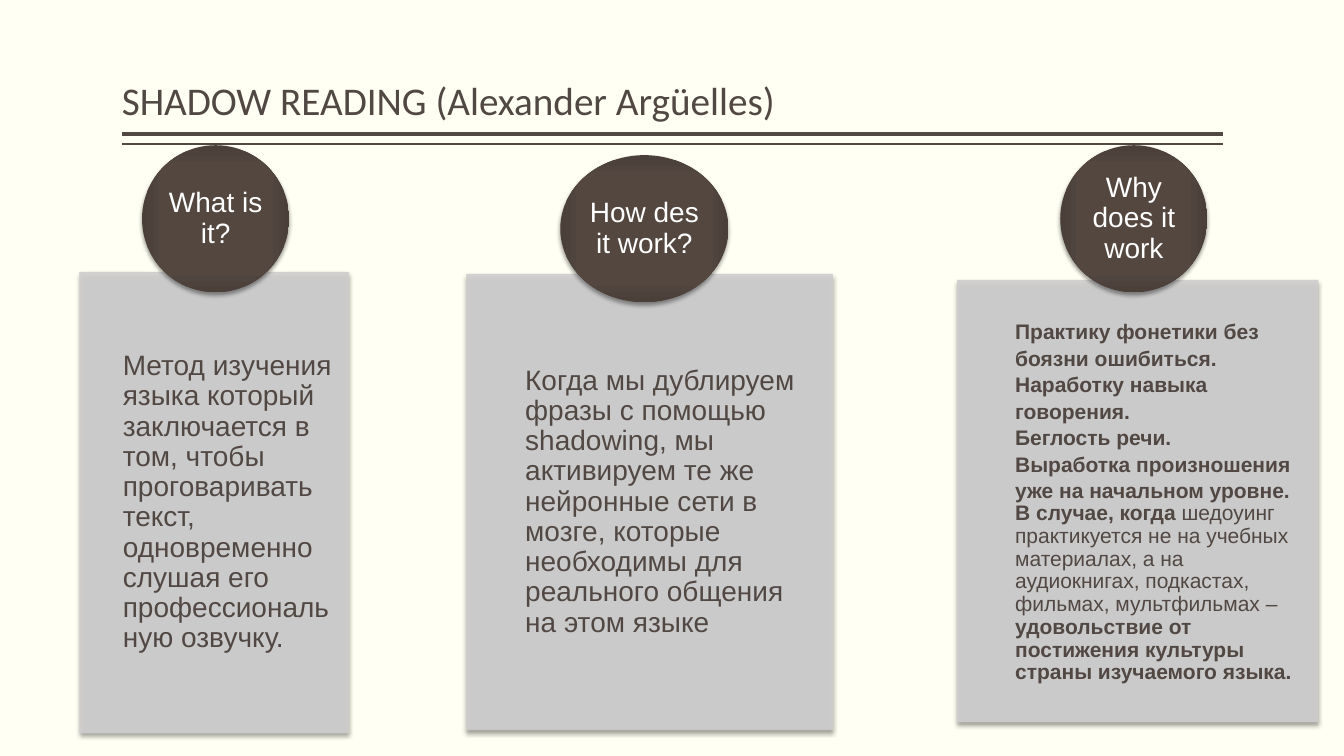
from dataclasses import dataclass

from lxml import etree
from pptx import Presentation
from pptx.dml.color import RGBColor
from pptx.enum.shapes import MSO_CONNECTOR, MSO_SHAPE
from pptx.enum.text import MSO_ANCHOR, MSO_AUTO_SIZE, PP_ALIGN
from pptx.oxml import parse_xml
from pptx.oxml.ns import nsdecls, qn
from pptx.util import Cm, Pt


@dataclass(frozen=True)
class Theme:
    paper: str = "FFFFF3"
    ink: str = "514843"
    card: str = "D0CFCF"
    white: str = "FFFFFF"
    disc: tuple = ((0, "544740"), (71, "534740"), (100, "4A3F39"))
    heading_font: str = "Calibri"
    body_font: str = "Arial"
    heading: int = 28
    body: int = 20
    small: int = 15


THEME = Theme()


def fill_text(box, paras, size, color, font, align, anchor, insets):
    """Each paragraph is (line spacing, [(text, bold), ...])."""
    frame = box.text_frame
    frame.word_wrap = True
    frame.auto_size = MSO_AUTO_SIZE.NONE
    frame.vertical_anchor = anchor
    (frame.margin_left, frame.margin_top,
     frame.margin_right, frame.margin_bottom) = [Cm(inset) for inset in insets]
    for index, (spacing, spans) in enumerate(paras):
        para = frame.add_paragraph() if index else frame.paragraphs[0]
        para.alignment = align
        para.line_spacing = spacing
        para.space_before = para.space_after = Pt(0)
        for text, bold in spans:
            span = para.add_run()
            span.text = text
            span.font.name = font
            span.font.size = Pt(size)
            span.font.bold = bold
            span.font.color.rgb = RGBColor.from_string(color)


def add_shadow(shape):
    shape.shadow.inherit = False
    effects = shape._element.spPr.find(qn("a:effectLst"))
    effects.append(parse_xml(
        f'<a:outerShdw {nsdecls("a")} blurRad="{Pt(3.1)}" dist="{Pt(2)}" '
        'dir="5400000" rotWithShape="0"><a:srgbClr val="000000">'
        '<a:alpha val="38000"/></a:srgbClr></a:outerShdw>'))


# Slide
deck = Presentation()
deck.slide_width, deck.slide_height = Cm(33.87), Cm(19.05)
page = deck.slides.add_slide(deck.slide_layouts[5])
page.background.fill.solid()
page.background.fill.fore_color.rgb = RGBColor.from_string(THEME.paper)

# Title
title = page.shapes.title
title.left, title.top, title.width, title.height = Cm(3.07), Cm(0.2), Cm(27.74), Cm(3.05)
fill_text(title, [(0.9, [("SHADOW READING (Alexander Argüelles)", False)])],
          THEME.heading, THEME.ink, THEME.heading_font, PP_ALIGN.LEFT,
          MSO_ANCHOR.BOTTOM, (0, 0.13, 0, 0.13))

# Double rule under the title
for y, weight in ((3.38, 3), (3.63, 1)):
    rule = page.shapes.add_connector(MSO_CONNECTOR.STRAIGHT, Cm(30.81), Cm(y), Cm(3.07), Cm(y))
    rule.line.color.rgb = RGBColor.from_string(THEME.ink)
    rule.line.width = Pt(weight)
    etree.SubElement(rule._element.spPr, qn("a:effectLst"))

# Columns: question, disc box, card box, text size, padding, paragraphs
COLUMNS = [
    ("What is it?", (3.58, 3.66, 3.71, 3.71), (2.01, 6.86, 6.78, 11.61), THEME.body, 0.41, [
        (0.9, [("Метод изучения языка который заключается в том, чтобы проговаривать текст, "
                "одновременно слушая его профессиональную озвучку.", False)]),
    ]),
    ("How des it work?", (14.12, 3.91, 4.24, 3.71), (11.76, 6.91, 9.22, 11.48), THEME.body, 0.41, [
        (0.9, [("Когда мы дублируем фразы с помощью shadowing, мы активируем те же нейронные "
                "сети в мозге, которые необходимы для реального общения на этом языке", False)]),
    ]),
    ("Why does it work", (26.72, 3.66, 3.71, 3.71), (24.13, 7.06, 9.09, 11.13), THEME.small, 0.3, [
        (1.05, [("Практику фонетики без боязни ошибиться.", True)]),
        (1.05, [("Наработку навыка говорения.", True)]),
        (1.05, [("Беглость речи.", True)]),
        (1.05, [("Выработка произношения уже на начальном уровне.", True)]),
        (0.9, [("В случае, когда ", True),
               ("шедоуинг практикуется не на учебных материалах, а на аудиокнигах, "
                "подкастах, фильмах, мультфильмах – ", False),
               ("удовольствие от постижения культуры страны изучаемого языка.", True)]),
    ]),
]
CARD_INDENT = 0.16   # share of the card width left of its text
DISC_INSET = 0.146   # share of the disc outside its text square

for question, disc_box, card_box, size, pad, paras in COLUMNS:
    # Card
    x, y, width, height = card_box
    card = page.shapes.add_shape(MSO_SHAPE.RECTANGLE, *map(Cm, card_box))
    card.fill.solid()
    card.fill.fore_color.rgb = RGBColor.from_string(THEME.card)
    card.line.color.rgb = RGBColor.from_string(THEME.card)
    card.line.width = Pt(0.5)
    for color in card._element.spPr.iter(qn("a:srgbClr")):
        etree.SubElement(color, qn("a:alpha"), val="90000")
    add_shadow(card)

    # Card text
    indent = width * CARD_INDENT
    answer = page.shapes.add_textbox(Cm(x + indent), Cm(y), Cm(width - indent), Cm(height))
    fill_text(answer, paras, size, THEME.ink, THEME.body_font, PP_ALIGN.LEFT,
              MSO_ANCHOR.MIDDLE, (0, pad, pad, pad))

    # Disc with a gradient from its centre
    x, y, width, height = disc_box
    disc = page.shapes.add_shape(MSO_SHAPE.OVAL, *map(Cm, disc_box))
    disc.line.fill.background()
    stops = "".join(f'<a:gs pos="{stop * 1000}"><a:srgbClr val="{color}"/></a:gs>'
                    for stop, color in THEME.disc)
    disc._element.spPr.find(qn("a:prstGeom")).addnext(parse_xml(
        f'<a:gradFill {nsdecls("a")} rotWithShape="1"><a:gsLst>{stops}</a:gsLst>'
        '<a:path path="rect"><a:fillToRect l="50000" t="50000" r="50000" b="50000"/>'
        '</a:path></a:gradFill>'))
    add_shadow(disc)

    # Disc text
    label = page.shapes.add_textbox(
        Cm(x + width * DISC_INSET), Cm(y + height * DISC_INSET),
        Cm(width * (1 - 2 * DISC_INSET)), Cm(height * (1 - 2 * DISC_INSET)))
    fill_text(label, [(0.9, [(question, False)])], THEME.body, THEME.white,
              THEME.body_font, PP_ALIGN.CENTER, MSO_ANCHOR.MIDDLE, (0, 0, 0, 0))

deck.save("out.pptx")
